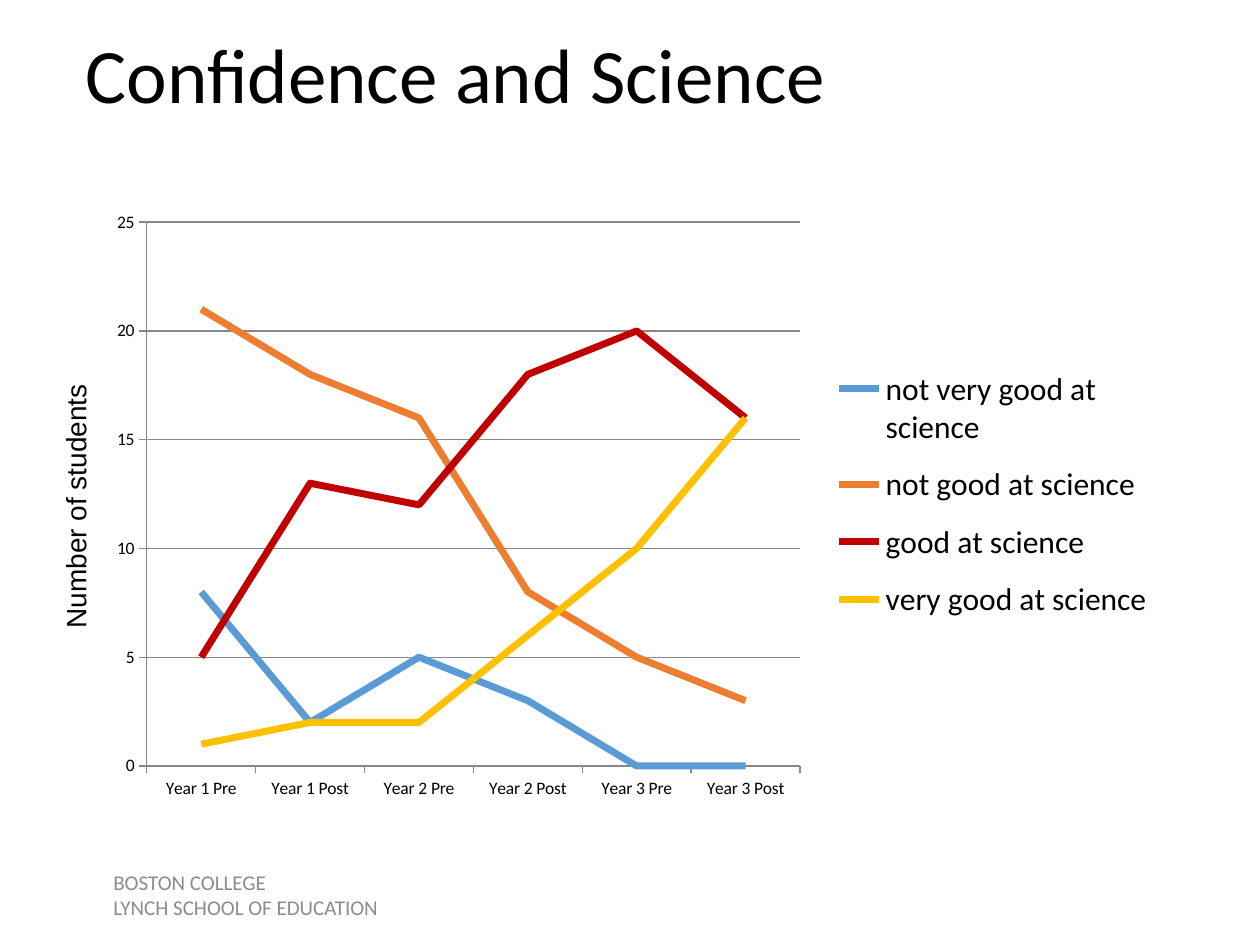
from dataclasses import dataclass

from pptx import Presentation
from pptx.chart.data import CategoryChartData
from pptx.dml.color import RGBColor
from pptx.enum.chart import XL_CHART_TYPE as ChartType
from pptx.enum.chart import XL_LEGEND_POSITION as LegendPosition
from pptx.enum.chart import XL_TICK_MARK as TickMark
from pptx.enum.text import MSO_ANCHOR as Anchor
from pptx.oxml import parse_xml
from pptx.oxml.ns import nsdecls, qn
from pptx.util import Inches, Pt


@dataclass
class Label:
    lines: list[str]
    left: float
    top: float
    width: float
    height: float
    size: int
    font: str = "Calibri"
    color: str = "000000"
    anchor: Anchor = Anchor.MIDDLE
    indent: float = 0.1
    rotation: int = 0
    spacing: float = 1.0


@dataclass
class Answer:
    name: str
    counts: list[int]
    color: str


LABELS = [
    Label(["Confidence and Science"], 0.58, 0, 9.17, 1.25, 44, spacing=0.9),
    Label(["BOSTON COLLEGE", "LYNCH SCHOOL OF EDUCATION"],
          0.17, 6.85, 4.33, 0.5, 12, color="8C8C8C", indent=0.73),
    Label(["Number of students"], -0.57, 3.73, 2.34, 0.37, 16,
          font="Arial", anchor=Anchor.TOP, rotation=270),
]
TERMS = [f"Year {year} {term}" for year in (1, 2, 3) for term in ("Pre", "Post")]
ANSWERS = [
    Answer("not very good at science", [8, 2, 5, 3, 0, 0], "5B9BD5"),
    Answer("not good at science", [21, 18, 16, 8, 5, 3], "ED7D31"),
    Answer("good at science", [5, 13, 12, 18, 20, 16], "C00000"),
    Answer("very good at science", [1, 2, 2, 6, 10, 16], "FFC000"),
]


def rgb(color: str) -> RGBColor:
    return RGBColor.from_string(color)


def set_font(font, size: int, name: str = "Calibri", color: str = "000000") -> None:
    font.size = Pt(size)
    font.name = name
    font.color.rgb = rgb(color)


def add_label(page, label: Label) -> None:
    box = page.shapes.add_textbox(Inches(label.left), Inches(label.top),
                                  Inches(label.width), Inches(label.height))
    box.rotation = label.rotation
    frame = box.text_frame
    frame.word_wrap = True
    frame.vertical_anchor = label.anchor
    frame.margin_left = Inches(label.indent)
    frame.text = "\n".join(label.lines)
    for para in frame.paragraphs:
        para.line_spacing = label.spacing
        set_font(para.font, label.size, label.font, label.color)


def place(element, index: int, target: str, left: float, top: float,
          width: float, height: float) -> None:
    for old in element.findall(qn("c:layout")):
        element.remove(old)
    inner = '<c:layoutTarget val="inner"/>' if target == "inner" else ""
    sizes = "".join(f'<c:{key} val="{value}"/>' for key, value in
                    zip("xywh", (left, top, width, height)))
    element.insert(index, parse_xml(
        f'<c:layout {nsdecls("c")}><c:manualLayout>{inner}'
        f'<c:xMode val="edge"/><c:yMode val="edge"/>{sizes}'
        '</c:manualLayout></c:layout>'))


def style_line(line, color: str, width: float) -> None:
    line.color.rgb = rgb(color)
    line.width = Pt(width)


def add_line_chart(page) -> None:
    data = CategoryChartData()
    data.categories = TERMS
    for answer in ANSWERS:
        data.add_series(answer.name, answer.counts)
    chart = page.shapes.add_chart(ChartType.LINE, Inches(0.74), Inches(1.57),
                                  Inches(8.5), Inches(4.85), data).chart
    chart.has_title = False
    set_font(chart.font, 10)

    for axis in (chart.category_axis, chart.value_axis):
        axis.major_tick_mark = TickMark.OUTSIDE
        axis.minor_tick_mark = TickMark.NONE
        style_line(axis.format.line, "878787", 0.75)
    values = chart.value_axis
    values.minimum_scale, values.maximum_scale, values.major_unit = 0, 25, 5
    values.has_major_gridlines = True
    style_line(values.major_gridlines.format.line, "878787", 0.75)

    for series, answer in zip(chart.plots[0].series, ANSWERS):
        series.smooth = False
        style_line(series.format.line, answer.color, 4)

    chart.has_legend = True
    legend = chart.legend
    legend.position = LegendPosition.RIGHT
    legend.include_in_layout = False
    set_font(legend.font, 18)
    place(legend._element, 1, "outer", 0.69, 0.25, 0.3, 0.47)
    plot_area = chart._chartSpace.find(qn("c:chart")).find(qn("c:plotArea"))
    place(plot_area, 0, "inner", 0.05, 0.04, 0.61, 0.89)


def main() -> None:
    deck = Presentation()
    deck.slide_width, deck.slide_height = Inches(10), Inches(7.5)
    page = deck.slides.add_slide(deck.slide_layouts[6])
    add_line_chart(page)
    for label in LABELS:
        add_label(page, label)
    deck.save("out.pptx")


if __name__ == "__main__":
    main()
